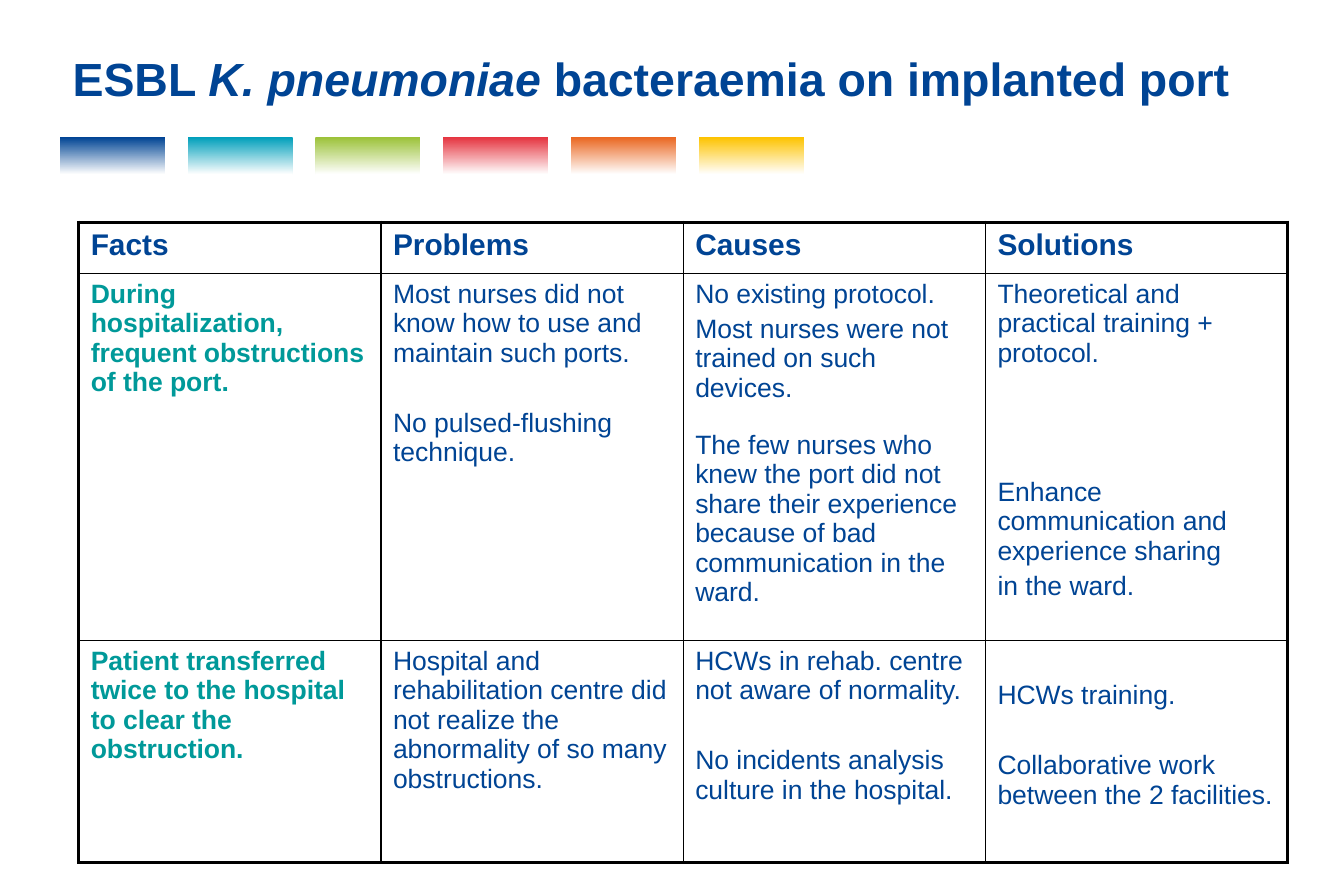
from lxml import etree
from pptx import Presentation
from pptx import util as u
from pptx.dml.color import RGBColor
from pptx.enum import shapes, text
from pptx.oxml import ns

NAVY = RGBColor(0x00, 0x44, 0x94)
CYAN = RGBColor(0x00, 0x9F, 0xBB)
GREEN = RGBColor(0x9C, 0xC2, 0x39)
RED = RGBColor(0xE5, 0x35, 0x40)
ORANGE = RGBColor(0xEA, 0x67, 0x21)
YELLOW = RGBColor(0xFD, 0xC3, 0x00)
TEAL = RGBColor(0x00, 0x99, 0x99)
WHITE = RGBColor(0xFF, 0xFF, 0xFF)
BLACK = RGBColor(0x00, 0x00, 0x00)

FONT = "Arial"
BAR_COLORS = [NAVY, CYAN, GREEN, RED, ORANGE, YELLOW]
BAR_LEFT, BAR_TOP, BAR_PITCH = 0.5, 1.15, 1.07
BAR_WIDTH, BAR_HEIGHT = 0.88, 0.31

TABLE_LEFT, TABLE_TOP = 0.66, 1.86
COL_WIDTH = 2.53
ROW_HEIGHTS = [0.43, 3.07, 1.86]
OUTER, INNER = 2.25, 1

# Space before a paragraph, in points
NEXT, SMALL_GAP, GAP, WIDE_GAP = 3.2, 16.5, 24.4, 66

# Each cell lists (space before, wording) paragraphs
HEADERS = ["Facts", "Problems", "Causes", "Solutions"]
ROWS = [
    [[(0, h)] for h in HEADERS],
    [
        [(0, "During hospitalization, frequent obstructions of the port.")],
        [(0, "Most nurses did not know how to use and maintain such ports."),
         (GAP, "No pulsed-flushing technique.")],
        [(0, "No existing protocol."),
         (NEXT, "Most nurses were not trained on such devices."),
         (SMALL_GAP, "The few nurses who knew the port did not share their "
                     "experience because of bad communication in the ward.")],
        [(0, "Theoretical and practical training + protocol."),
         (WIDE_GAP, "Enhance communication and experience sharing"),
         (NEXT, "in the ward.")],
    ],
    [
        [(0, "Patient transferred twice to the hospital to clear the obstruction.")],
        [(0, "Hospital and rehabilitation centre did not realize the "
             "abnormality of so many obstructions.")],
        [(0, "HCWs in rehab. centre not aware of normality."),
         (GAP, "No incidents analysis culture in the hospital.")],
        [(21, "HCWs training."),
         (GAP, "Collaborative work between the 2 facilities.")],
    ],
]


def style_run(r, size, color, bold=False, italic=False):
    r.font.name = FONT
    r.font.size = u.Pt(size)
    r.font.color.rgb = color
    r.font.bold = bold
    r.font.italic = italic


def add_title(s, parts):
    """Add the title from (wording, italic) parts."""
    tf = s.shapes.add_textbox(u.Inches(0.51), u.Inches(0.23),
                              u.Inches(10.23), u.Inches(0.85)).text_frame
    tf.word_wrap = True
    tf.vertical_anchor = text.MSO_ANCHOR.MIDDLE
    for wording, italic in parts:
        r = tf.paragraphs[0].add_run()
        r.text = wording
        style_run(r, 28, NAVY, bold=True, italic=italic)


def add_bar(s, col, color):
    """Add a bar that fades downwards to white."""
    sp = s.shapes.add_shape(shapes.MSO_SHAPE.RECTANGLE,
                            u.Inches(BAR_LEFT + col * BAR_PITCH), u.Inches(BAR_TOP),
                            u.Inches(BAR_WIDTH), u.Inches(BAR_HEIGHT))
    sp.shadow.inherit = False
    sp.line.fill.background()
    sp.fill.gradient()
    sp.fill.gradient_angle = 270
    for i, (stop, rgb) in enumerate(zip(sp.fill.gradient_stops, (color, WHITE))):
        stop.position = i
        stop.color.rgb = rgb


def set_borders(cell, widths):
    """Draw black borders; widths are left, right, top, bottom in points."""
    tc_pr = cell._tc.get_or_add_tcPr()
    for i, (side, width) in enumerate(zip("LRTB", widths)):
        ln = etree.Element(ns.qn(f"a:ln{side}"), w=str(u.Pt(width)))
        fill = etree.SubElement(ln, ns.qn("a:solidFill"))
        etree.SubElement(fill, ns.qn("a:srgbClr"), val=str(BLACK))
        tc_pr.insert(i, ln)


def fill_cell(cell, paragraphs, size, color, bold):
    # Space above the first paragraph goes into the cell's top margin
    cell.margin_top = u.Inches(0.05) + u.Pt(paragraphs[0][0])
    tf = cell.text_frame
    tf.text = "\n".join(wording for _, wording in paragraphs)
    for i, (p, (space, _)) in enumerate(zip(tf.paragraphs, paragraphs)):
        p.space_before = u.Pt(space if i else 0)
        style_run(p.runs[0], size, color, bold)


def add_analysis_table(s):
    n_rows, n_cols = len(ROWS), len(HEADERS)
    table = s.shapes.add_table(n_rows, n_cols, u.Inches(TABLE_LEFT), u.Inches(TABLE_TOP),
                               u.Inches(COL_WIDTH * n_cols),
                               u.Inches(sum(ROW_HEIGHTS))).table
    table.first_row = table.horz_banding = False
    for column in table.columns:
        column.width = u.Inches(COL_WIDTH)
    for i, row in enumerate(ROWS):
        table.rows[i].height = u.Inches(ROW_HEIGHTS[i])
        for j, paragraphs in enumerate(row):
            cell = table.cell(i, j)
            header, fact = i == 0, i > 0 and j == 0
            fill_cell(cell, paragraphs, 18 if header else 16,
                      TEAL if fact else NAVY, header or fact)
            cell.fill.background()
            edges = (j == 0, j == n_cols - 1, i == 0, i == n_rows - 1)
            set_borders(cell, [OUTER if edge else INNER for edge in edges])


def main():
    prs = Presentation()
    prs.slide_width, prs.slide_height = u.Inches(11.25), u.Inches(7.5)
    s = prs.slides.add_slide(prs.slide_layouts[6])
    for col, color in enumerate(BAR_COLORS):
        add_bar(s, col, color)
    add_title(s, [("ESBL ", False), ("K. pneumoniae", True),
                  (" bacteraemia on implanted port", False)])
    add_analysis_table(s)
    prs.save("out.pptx")


if __name__ == "__main__":
    main()
